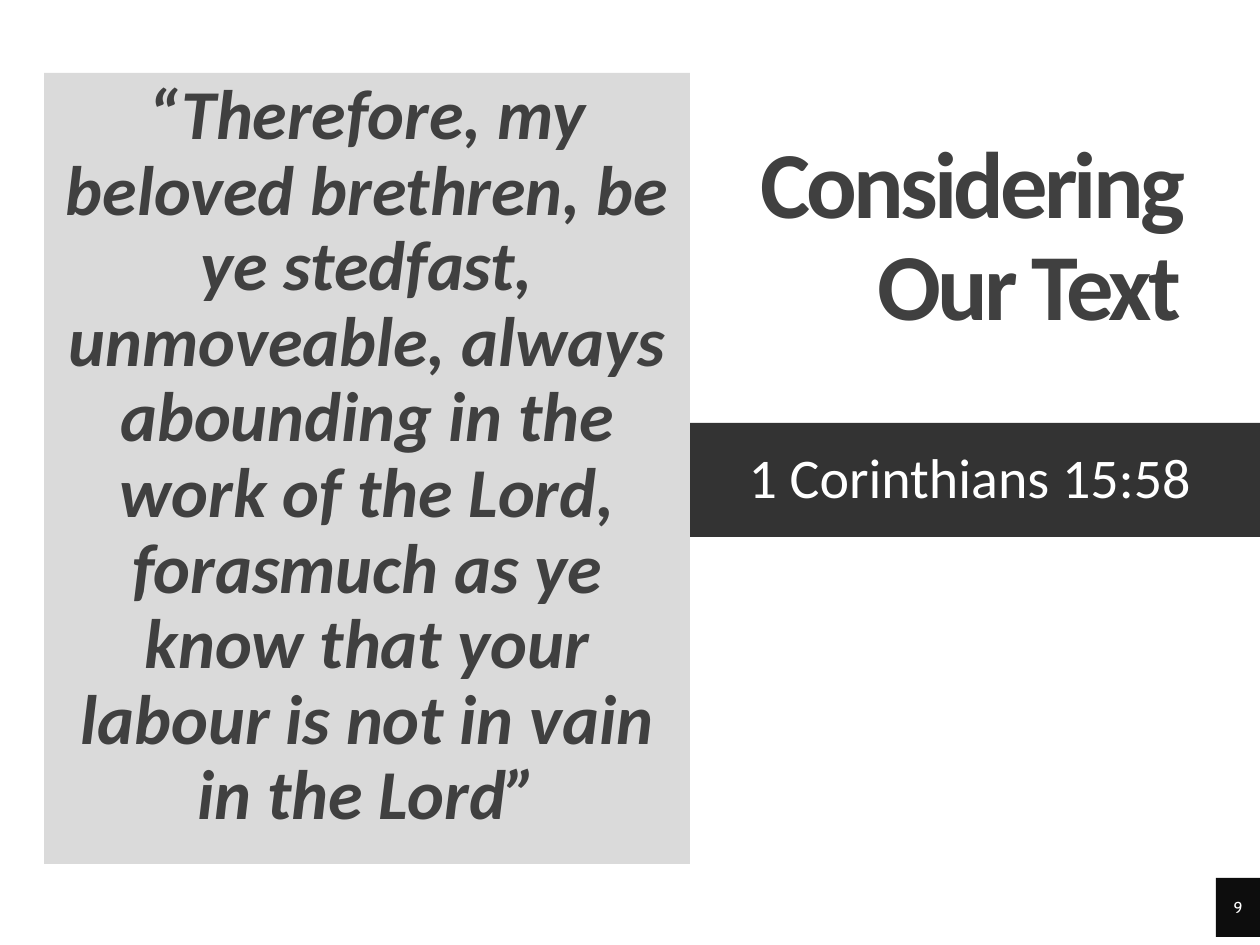
from lxml.etree import SubElement
from pptx import Presentation
from pptx.dml.color import RGBColor
from pptx.enum.shapes import MSO_SHAPE
from pptx.enum.text import MSO_ANCHOR, MSO_AUTO_SIZE, PP_ALIGN
from pptx.oxml.ns import qn
from pptx.util import Pt

PX = 914400 / 126


def rgb(color):
    return RGBColor.from_string(color)


def format_box(sp, box, fill, text, size, color, font="Calibri", align=PP_ALIGN.CENTER,
               anchor=MSO_ANCHOR.MIDDLE, insets=(13, 6, 13, 6), line_spacing=0.9):
    """Place a shape, fill it and set its single paragraph; return the paragraph."""
    sp.left, sp.top, sp.width, sp.height = [round(v * PX) for v in box]
    sp.fill.solid()
    sp.fill.fore_color.rgb = rgb(fill)
    sp.line.fill.background()
    tf = sp.text_frame
    tf.word_wrap = True
    tf.auto_size = MSO_AUTO_SIZE.NONE
    tf.vertical_anchor = anchor
    tf.margin_left, tf.margin_top, tf.margin_right, tf.margin_bottom = [
        round(v * PX) for v in insets]
    p = tf.paragraphs[0]
    p.text = text
    p.alignment = align
    p.line_spacing = line_spacing
    p.font.name = font
    p.font.size = Pt(size)
    p.font.color.rgb = rgb(color)
    return p


prs = Presentation()
prs.slide_width, prs.slide_height = round(1260 * PX), round(945 * PX)
s = prs.slides.add_slide(prs.slide_layouts[5])

# Title
p = format_box(s.shapes.title, (600, 112, 616, 268), "FFFFFF", "Considering Our Text",
               54, "404040", align=PP_ALIGN.RIGHT, anchor=MSO_ANCHOR.TOP,
               insets=(25, 25, 35, 25))
p.font.bold = True
p.runs[0].font._element.set("spc", "-220")

# Scripture reference, slide number and quotation
reference, number, quote = [
    s.shapes.add_shape(MSO_SHAPE.RECTANGLE, 0, 0, 0, 0) for _ in range(3)]
for sp in (reference, number, quote):
    sp.shadow.inherit = False

p = format_box(reference, (690, 423, 570, 114), "000000", "1 Corinthians 15:58",
               32, "FFFFFF", insets=(25, 25, 35, 25))
p.space_before = Pt(7.5)
black = reference.fill._xPr.find(qn("a:solidFill"))[0]
SubElement(black, qn("a:alpha"), val="80000")

format_box(number, (1216, 878, 44, 59), "0D0D0D", "9", 9, "FFFFFF", font="Cabin",
           insets=(0, 0, 0, 0), line_spacing=1.0)

p = format_box(quote, (44, 73, 646, 791), "DADADA",
               "“Therefore, my beloved brethren, be ye stedfast, unmoveable, always "
               "abounding in the work of the Lord, forasmuch as ye know that your "
               "labour is not in vain in the Lord”",
               40, "404040", anchor=MSO_ANCHOR.TOP)
p.space_before = Pt(7.5)
p.font.bold = p.font.italic = True

prs.save("out.pptx")
